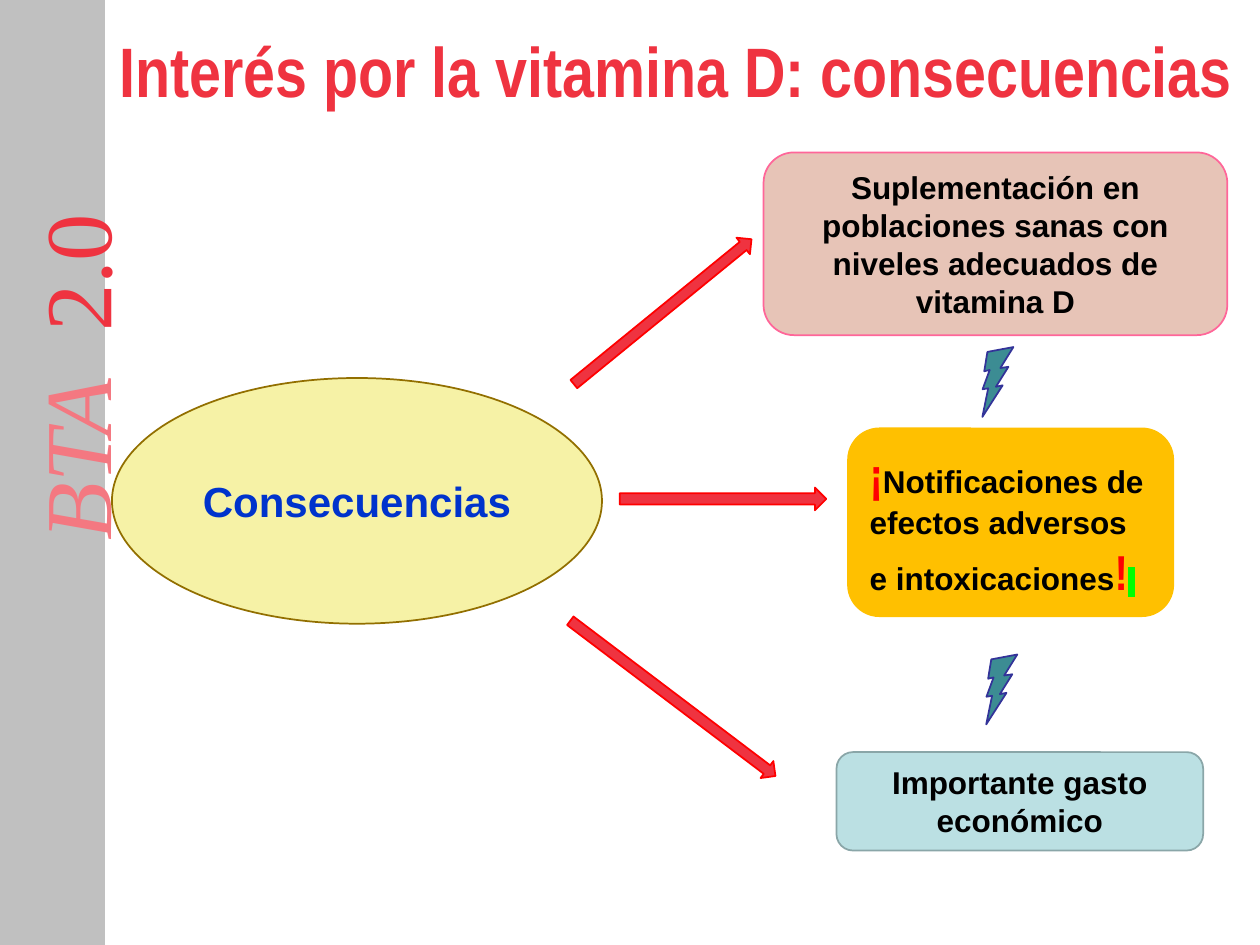
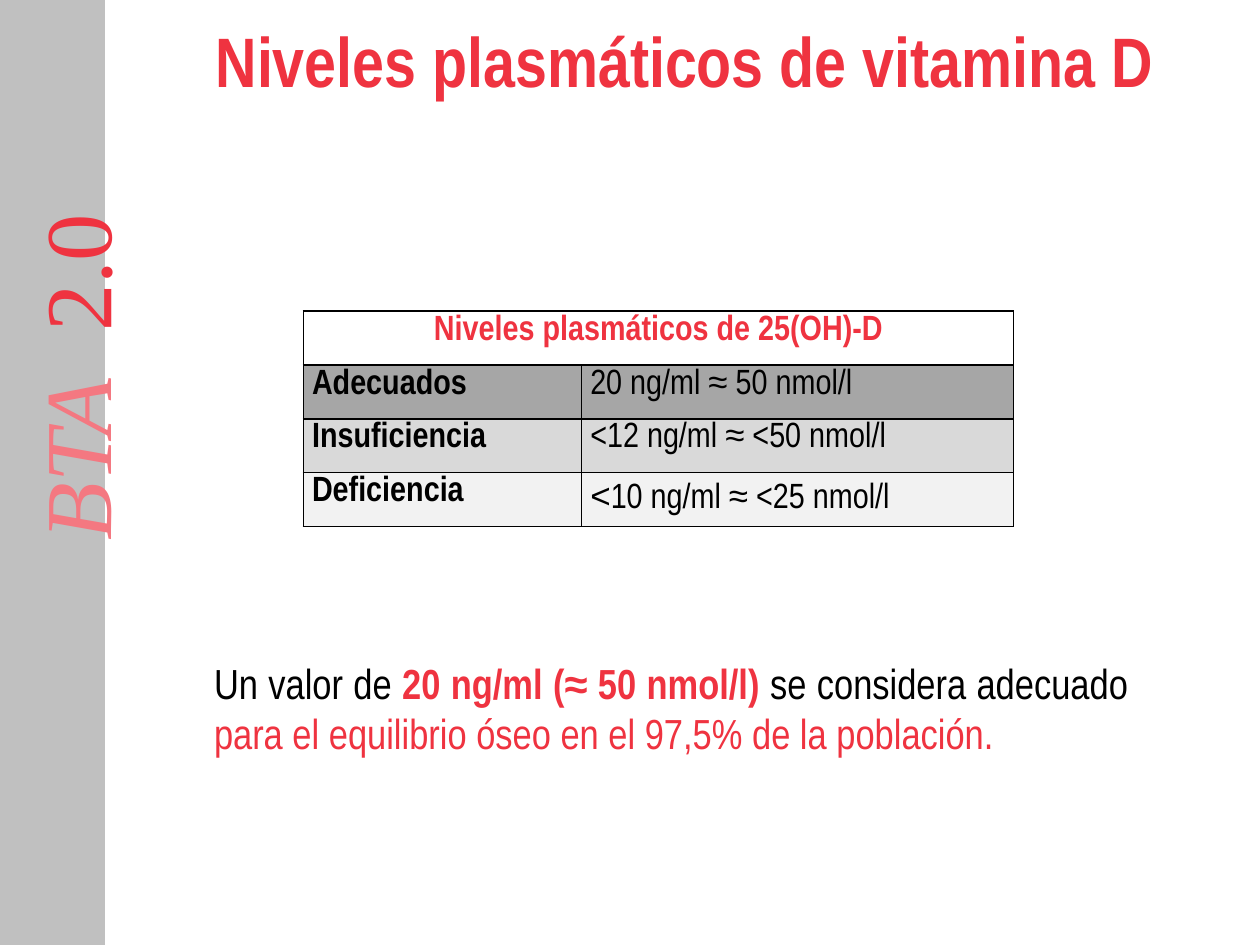
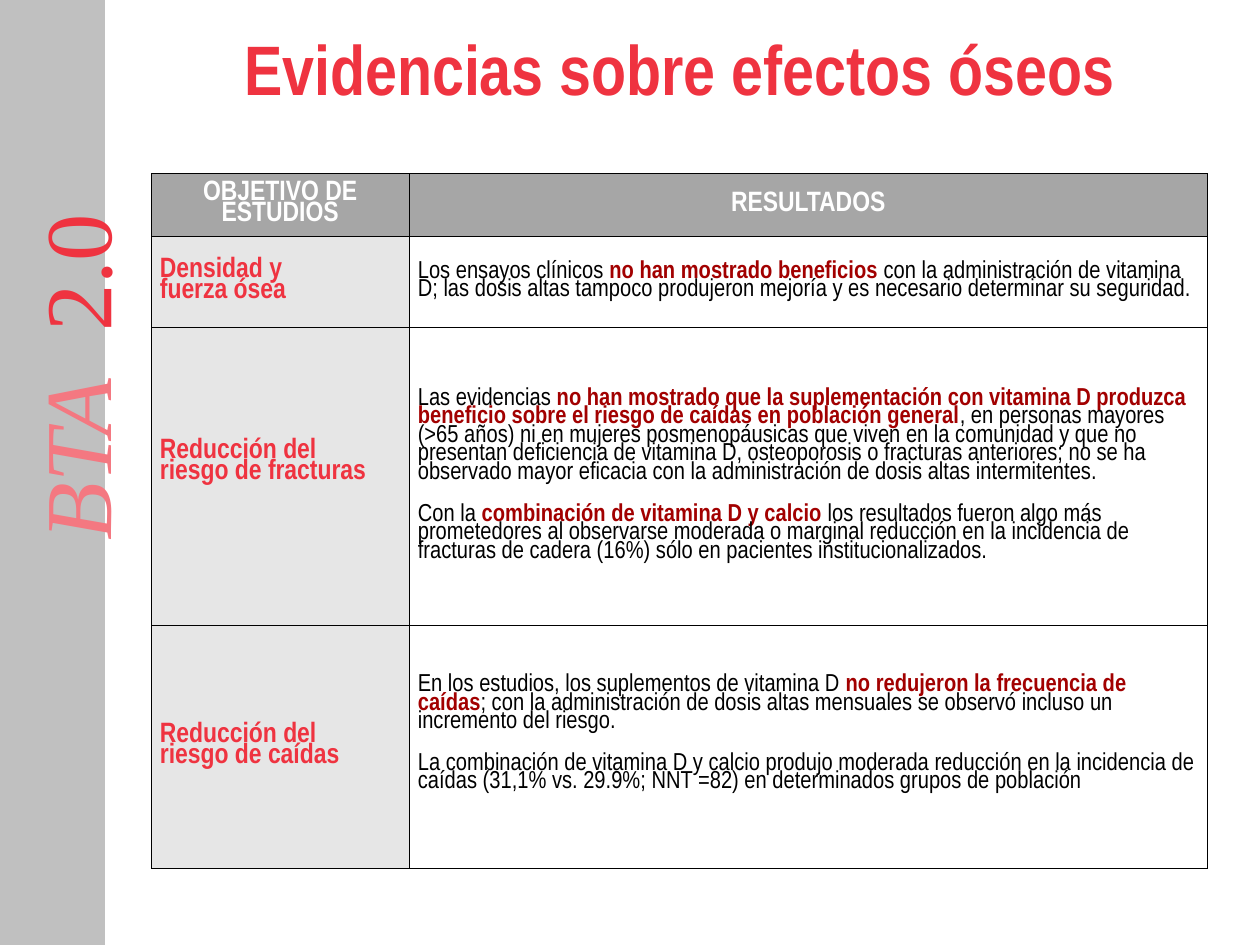
from lxml import etree
from pptx import Presentation
from pptx.dml.color import RGBColor
from pptx.enum import shapes, text
from pptx.oxml import ns
from pptx.util import Pt

COLORS = {
    "red": "EF3340", "pure_red": "FF0000", "dark_red": "A20000", "light_red": "F47881",
    "black": "000000", "white": "FFFFFF", "band": "C0C0C0", "blue": "0033CC",
    "rose": "E7C4B7", "pink": "FF6699", "cream": "F6F2A6", "brown": "926F00",
    "amber": "FFC000", "sky": "BBE0E3", "slate": "8AA6A8", "teal": "3C8C93",
    "navy": "333399", "green": "00FF00", "gray": "A6A6A6", "mid_gray": "D9D9D9",
    "pale_gray": "F2F2F2", "label_gray": "E6E6E6",
}
NARROW = "Arial Narrow"
KIND = shapes.MSO_SHAPE
ALIGN = text.PP_ALIGN
ANCHOR = text.MSO_ANCHOR

TITLE = {"name": NARROW, "size": 40, "color": "red", "bold": True}
BOX = {"name": "Arial", "size": 18, "color": "black", "bold": True}
MARK = {"name": NARROW, "size": 28, "color": "pure_red"}
STRONG = {"color": "red", "bold": True}
FINDING = {"color": "dark_red", "bold": True}

# A text is a list of paragraphs; a paragraph is a list of (words, format changes).
BRAND = [[("BTA", {"color": "light_red", "italic": True}), (" ", {"spacing": 13.5}), ("2.0", {})]]
WARNING = [[("¡", MARK), ("Notificaciones de efectos adversos e intoxicaciones", {}),
            ("!", MARK), (" ", {"name": NARROW, "highlight": "green"})]]

# kind, (left, top, width, height), fill, line, text, text format, alignment
BOXES = [
    (KIND.ROUNDED_RECTANGLE, (436.3, 87.1, 265, 104.4), "rose", "pink",
     [[("Suplementación en poblaciones sanas con niveles adecuados de vitamina D", {})]],
     BOX, ALIGN.CENTER),
    (KIND.OVAL, (64, 216, 280, 140.4), "cream", "brown", [[("Consecuencias", {})]],
     BOX | {"size": 24, "color": "blue"}, ALIGN.CENTER),
    (KIND.ROUNDED_RECTANGLE, (484.6, 244.8, 185.8, 107.3), "amber", "amber", WARNING,
     BOX, ALIGN.LEFT),
    (KIND.ROUNDED_RECTANGLE, (478, 429.8, 209.5, 56.2), "sky", "slate",
     [[("Importante gasto económico", {})]], BOX, ALIGN.CENTER),
]
ARROWS = [((313.2, 172, 131, 12.2), 320.8), ((354.2, 278.6, 118, 13), 0),
          ((311, 393, 147, 12.2), 37.1)]
BOLTS = [(550.8, 200.9, 36, 30.2), (553, 376.6, 36, 30.2)]

LEVELS_TITLE = "Niveles plasmáticos de 25(OH)-D"
LEVELS = [
    ("Adecuados", [("20 ng/ml ≈ 50 nmol/l", {})], "gray"),
    ("Insuficiencia", [("<12 ng/ml ≈ <50 nmol/l", {})], "mid_gray"),
    ("Deficiencia", [("˂", {"name": "Arial"}), ("10 ng/ml ≈ <25 nmol/l", {})], "pale_gray"),
]
SUMMARY = [[
    ("Un valor de ", {}), ("20 ng/ml (≈ 50 nmol/l) ", STRONG), ("se considera adecuado ", {}),
    ("para el equilibrio óseo en el 97,5% de la población.", {"color": "red"}),
]]

STUDY_HEADERS = ("OBJETIVO DE ESTUDIOS", "RESULTADOS")
# label lines, space under label, results, space under results
STUDIES = [
    (("Densidad y", "fuerza ósea"), 0, [[
        ("Los ensayos clínicos ", {}), ("no han mostrado beneficios ", FINDING),
        ("con la administración de vitamina D; las dosis altas tampoco produjeron mejoría y es "
         "necesario determinar su seguridad.", {})]], 0),
    (("Reducción del", "riesgo de fracturas"), 15.3, [
        [("Las evidencias ", {}),
         ("no han mostrado que la suplementación con vitamina D produzca beneficio sobre el "
          "riesgo de caídas en población general", FINDING),
         (", en personas mayores (>65 años) ni en mujeres posmenopáusicas que viven en la "
          "comunidad y que no presentan deficiencia de vitamina D, osteoporosis o fracturas "
          "anteriores; no se ha observado mayor eficacia con la administración de dosis altas "
          "intermitentes.", {})],
        [("Con la ", {}), ("combinación de vitamina D y calcio ", FINDING),
         ("los resultados fueron algo más prometedores al observarse moderada o marginal "
          "reducción en la incidencia de fracturas de cadera (16%) sólo en pacientes "
          "institucionalizados.", {})]], 0),
    (("Reducción del", "riesgo de caídas"), 0, [
        [("En los estudios, los suplementos de vitamina D ", {}),
         ("no redujeron la frecuencia de caídas", FINDING),
         ("; con la administración de dosis altas mensuales se observó incluso un incremento "
          "del riesgo.", {})],
        [("La combinación de vitamina D y calcio produjo moderada reducción en la incidencia de "
          "caídas (31,1% vs. 29.9%; NNT =82) en determinados grupos de población", {})]], 13.3),
]


def rgb(color):
    return RGBColor.from_string(COLORS[color])


def points(values):
    return [Pt(value) for value in values]


def add_color(parent, tag, color):
    element = etree.SubElement(parent, ns.qn(tag))
    etree.SubElement(element, ns.qn("a:srgbClr"), val=COLORS[color])
    return element


def write(frame, paragraphs, base, align=ALIGN.LEFT, line_spacing=None, gap=0):
    """Fill a text frame; gap is the space between paragraphs."""
    frame.word_wrap = True
    for index, runs in enumerate(paragraphs):
        paragraph = frame.add_paragraph() if index else frame.paragraphs[0]
        layout = {"alignment": align, "line_spacing": line_spacing,
                  "space_before": Pt(gap if index else 0)}
        for key, value in layout.items():
            setattr(paragraph, key, value)
        for words, changes in runs:
            run = paragraph.add_run()
            run.text = words
            style = base | changes
            for key in ("name", "bold", "italic"):
                setattr(run.font, key, style.get(key))
            run.font.size = Pt(style["size"])
            run.font.color.rgb = rgb(style["color"])
            properties = run.font._element
            if "spacing" in style:
                properties.set("spc", str(round(style["spacing"] * 100)))
            if "highlight" in style:
                highlight = add_color(properties, "a:highlight", style["highlight"])
                properties.find(ns.qn("a:solidFill")).addnext(highlight)


def add_shape(slide, kind, place, fill, line, width=1, rotation=0):
    shape = slide.shapes.add_shape(kind, *points(place))
    shape.shadow.inherit = False
    shape.rotation = rotation
    shape.fill.solid()
    shape.fill.fore_color.rgb = rgb(fill)
    shape.line.color.rgb = rgb(line)
    shape.line.width = Pt(width)
    return shape


def add_text(slide, place, *content, **layout):
    box = slide.shapes.add_textbox(*points(place))
    write(box.text_frame, *content, **layout)
    return box


def add_slide(presentation, title, title_place):
    """Add a slide with the side band, its vertical heading and the title."""
    slide = presentation.slides.add_slide(presentation.slide_layouts[6])
    add_shape(slide, KIND.RECTANGLE, (0, 0, 59.8, 540), "band", "band", 0.75)
    brand = add_text(slide, (-80, 163.4, 232.6, 72), BRAND,
                     {"name": "Times New Roman", "size": 54, "color": "red"})
    brand.rotation = 270
    brand.text_frame.margin_top = Pt(9.4)
    add_text(slide, title_place, [[(title, {})]], TITLE, align=ALIGN.CENTER)
    return slide


def add_table(slide, left, top, widths, heights):
    frame = slide.shapes.add_table(len(heights), len(widths), Pt(left), Pt(top),
                                   Pt(sum(widths)), Pt(sum(heights)))
    table = frame.table
    table.first_row = table.horz_banding = False
    for column, width in zip(table.columns, widths):
        column.width = Pt(width)
    for row, height in zip(table.rows, heights):
        row.height = Pt(height)
    return table


def style_cell(cell, fill, border, anchor, top=0, bottom=0):
    margins = {"margin_left": 5, "margin_right": 5, "margin_top": top, "margin_bottom": bottom}
    for key, value in margins.items():
        setattr(cell, key, Pt(value))
    cell.vertical_anchor = anchor
    cell.fill.solid()
    cell.fill.fore_color.rgb = rgb(fill)
    properties = cell._tc.get_or_add_tcPr()
    for index, side in enumerate(("a:lnL", "a:lnR", "a:lnT", "a:lnB")):
        line = etree.Element(ns.qn(side), w=str(Pt(border)))
        add_color(line, "a:solidFill", "black")
        properties.insert(index, line)


def build_consequences(presentation):
    slide = add_slide(presentation, "Interés por la vitamina D: consecuencias",
                      (52.6, 12.2, 667.4, 73.4))
    for kind, place, fill, line, paragraphs, style, align in BOXES:
        shape = add_shape(slide, kind, place, fill, line)
        shape.text_frame.vertical_anchor = ANCHOR.MIDDLE
        write(shape.text_frame, paragraphs, style, align)
    for place, rotation in ARROWS:
        add_shape(slide, KIND.RIGHT_ARROW, place, "red", "pure_red", rotation=rotation)
    for place in BOLTS:
        bolt = add_shape(slide, KIND.LIGHTNING_BOLT, place, "teal", "navy", rotation=328.5)
        bolt._element.spPr.get_or_add_xfrm().set("flipH", "1")


def build_levels(presentation):
    slide = add_slide(presentation, "Niveles plasmáticos de vitamina D", (67, 6.5, 648, 69))
    table = add_table(slide, 173.3, 177.8, (159, 247), [30.8] * (len(LEVELS) + 1))
    base = {"name": NARROW, "size": 20, "color": "black"}
    fills = ["white"] + [fill for _, _, fill in LEVELS]
    for row, fill in enumerate(fills):
        for column in range(2):
            style_cell(table.cell(row, column), fill, 1, ANCHOR.TOP, top=0.7)
    header = table.cell(0, 0)
    header.merge(table.cell(0, 1))
    write(header.text_frame, [[(LEVELS_TITLE, STRONG)]], base, ALIGN.CENTER, 1.07)
    for row, (label, value, _) in enumerate(LEVELS, start=1):
        for column, runs in enumerate(([(label, {"bold": True})], value)):
            write(table.cell(row, column).text_frame, [runs], base, ALIGN.JUSTIFY, 1.07)
    add_text(slide, (115.2, 372.2, 536.4, 65.5), SUMMARY, base | {"size": 24},
             align=ALIGN.JUSTIFY)


def build_evidence(presentation):
    slide = add_slide(presentation, "Evidencias sobre efectos óseos", (86.4, 10.8, 603.4, 59))
    table = add_table(slide, 86.4, 99.2, (147.4, 456.2), (36, 52, 169.8, 139))
    heading = {"name": NARROW, "size": 16, "color": "white", "bold": True}
    label_style = heading | {"color": "red"}
    body = {"name": NARROW, "size": 14, "color": "black"}
    for column, words in enumerate(STUDY_HEADERS):
        cell = table.cell(0, column)
        style_cell(cell, "gray", 0.25, ANCHOR.MIDDLE)
        write(cell.text_frame, [[(words, {})]], heading, ALIGN.CENTER, 0.8)
    for row, (label, label_space, results, results_space) in enumerate(STUDIES, start=1):
        goal, finding = table.cell(row, 0), table.cell(row, 1)
        style_cell(goal, "label_gray", 0.25, ANCHOR.MIDDLE, bottom=label_space)
        write(goal.text_frame, [[(line, {})] for line in label], label_style, line_spacing=0.8)
        style_cell(finding, "white", 0.25, ANCHOR.MIDDLE, bottom=results_space)
        write(finding.text_frame, results, body, line_spacing=0.8, gap=13.3)


def main():
    presentation = Presentation()
    presentation.slide_width, presentation.slide_height = Pt(720), Pt(540)
    build_consequences(presentation)
    build_levels(presentation)
    build_evidence(presentation)
    presentation.save("out.pptx")


if __name__ == "__main__":
    main()
